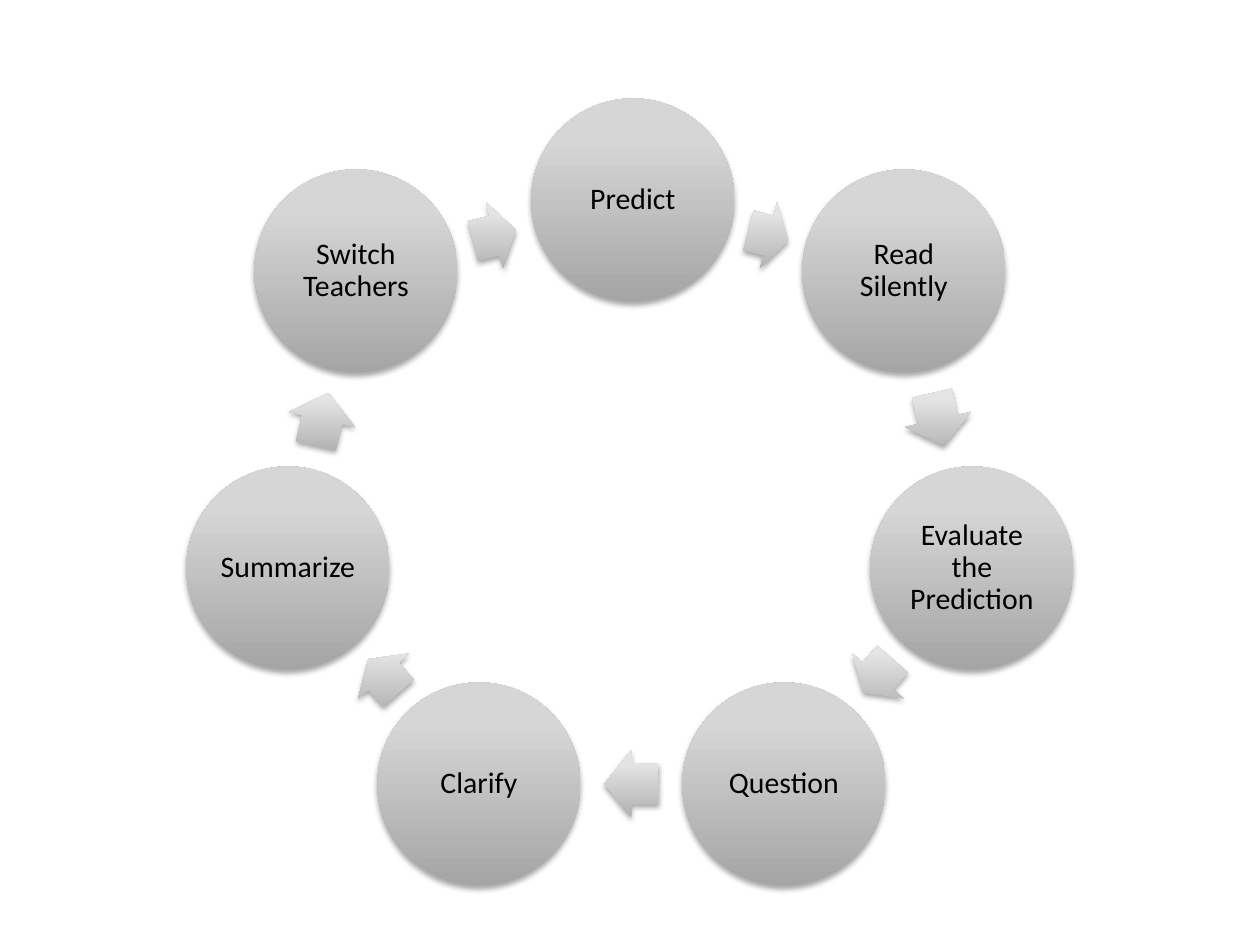
import copy
import math

import lxml.etree
import pptx
import pptx.dml.color
import pptx.enum.shapes
import pptx.enum.text
import pptx.oxml.ns
import pptx.util

BLACK = pptx.dml.color.RGBColor(0x00, 0x00, 0x00)
CIRCLE_DARK = pptx.dml.color.RGBColor(0xA5, 0xA5, 0xA5)
CIRCLE_MID = pptx.dml.color.RGBColor(0xD6, 0xD6, 0xD6)
CIRCLE_LIGHT = pptx.dml.color.RGBColor(0xD7, 0xD7, 0xD7)
ARROW_DARK = pptx.dml.color.RGBColor(0xB0, 0xB0, 0xB0)
ARROW_MID = pptx.dml.color.RGBColor(0xE4, 0xE4, 0xE4)
ARROW_LIGHT = pptx.dml.color.RGBColor(0xE5, 0xE5, 0xE5)

EMU_PER_PX = pptx.util.Inches(1) / 126
DIAMETER = 203
ARROW_HEIGHT = 68
ARROW_SHARE_OF_GAP = 0.53

STEPS = [
    ("Predict", 633, 200),
    ("Read Silently", 904, 271),
    ("Evaluate the Prediction", 972, 568),
    ("Question", 784, 784),
    ("Clarify", 479, 784),
    ("Summarize", 288, 568),
    ("Switch Teachers", 356, 271),
]


def px(length):
    return pptx.util.Emu(round(length * EMU_PER_PX))


class CyclePage:
    font = "Calibri"
    size = pptx.util.Pt(17)
    circle_colors = (CIRCLE_DARK, CIRCLE_MID, CIRCLE_LIGHT)
    arrow_colors = (ARROW_DARK, ARROW_MID, ARROW_LIGHT)
    stop_positions = (0, 0.8, 1)

    def __init__(self, deck):
        self.page = deck.slides.add_slide(deck.slide_layouts[6])

    def shape(self, kind, center_x, center_y, width, height, colors):
        shape = self.page.shapes.add_shape(
            kind, px(center_x - width / 2), px(center_y - height / 2), px(width), px(height))
        shape.line.fill.background()
        self.shade(shape, colors)
        self.shadow(shape)
        return shape

    def shade(self, shape, colors):
        shape.fill.gradient()
        shape.fill.gradient_angle = 90
        gradient = shape.element.spPr.find(pptx.oxml.ns.qn("a:gradFill"))
        gradient.set("rotWithShape", "0")
        stops = gradient.find(pptx.oxml.ns.qn("a:gsLst"))
        stops.append(copy.deepcopy(stops[-1]))
        for stop, color, position in zip(shape.fill.gradient_stops, colors, self.stop_positions):
            stop.color.rgb = color
            stop.position = position

    def shadow(self, shape):
        shape.shadow.inherit = False
        effects = shape.element.spPr.find(pptx.oxml.ns.qn("a:effectLst"))
        outer = lxml.etree.SubElement(
            effects, pptx.oxml.ns.qn("a:outerShdw"),
            blurRad="40000", dist="23000", dir="5400000", rotWithShape="0")
        color = lxml.etree.SubElement(outer, pptx.oxml.ns.qn("a:srgbClr"), val=str(BLACK))
        lxml.etree.SubElement(color, pptx.oxml.ns.qn("a:alpha"), val="35000")

    def circle(self, label, center_x, center_y):
        circle = self.shape(pptx.enum.shapes.MSO_SHAPE.OVAL, center_x, center_y,
                            DIAMETER, DIAMETER, self.circle_colors)
        frame = circle.text_frame
        frame.text = label
        frame.word_wrap = True
        frame.vertical_anchor = pptx.enum.text.MSO_ANCHOR.MIDDLE
        frame.margin_left = frame.margin_right = pptx.util.Inches(0.02)
        frame.margin_top = frame.margin_bottom = pptx.util.Inches(0.02)
        para = frame.paragraphs[0]
        para.alignment = pptx.enum.text.PP_ALIGN.CENTER
        para.line_spacing = 0.9
        span = para.runs[0]
        span.font.name = self.font
        span.font.size = self.size
        span.font.color.rgb = BLACK

    def arrow(self, start_x, start_y, end_x, end_y):
        across, down = end_x - start_x, end_y - start_y
        gap = math.hypot(across, down) - DIAMETER
        arrow = self.shape(pptx.enum.shapes.MSO_SHAPE.RIGHT_ARROW,
                           (start_x + end_x) / 2, (start_y + end_y) / 2,
                           ARROW_SHARE_OF_GAP * gap, ARROW_HEIGHT, self.arrow_colors)
        arrow.adjustments[0] = 0.6
        arrow.adjustments[1] = 0.5
        arrow.rotation = math.degrees(math.atan2(down, across)) % 360


def main():
    deck = pptx.Presentation()
    deck.slide_width = pptx.util.Inches(10)
    deck.slide_height = pptx.util.Inches(7.5)
    cycle = CyclePage(deck)
    for step, following in zip(STEPS, STEPS[1:] + STEPS[:1]):
        cycle.circle(*step)
        cycle.arrow(*step[1:], *following[1:])
    deck.save("out.pptx")


if __name__ == "__main__":
    main()
